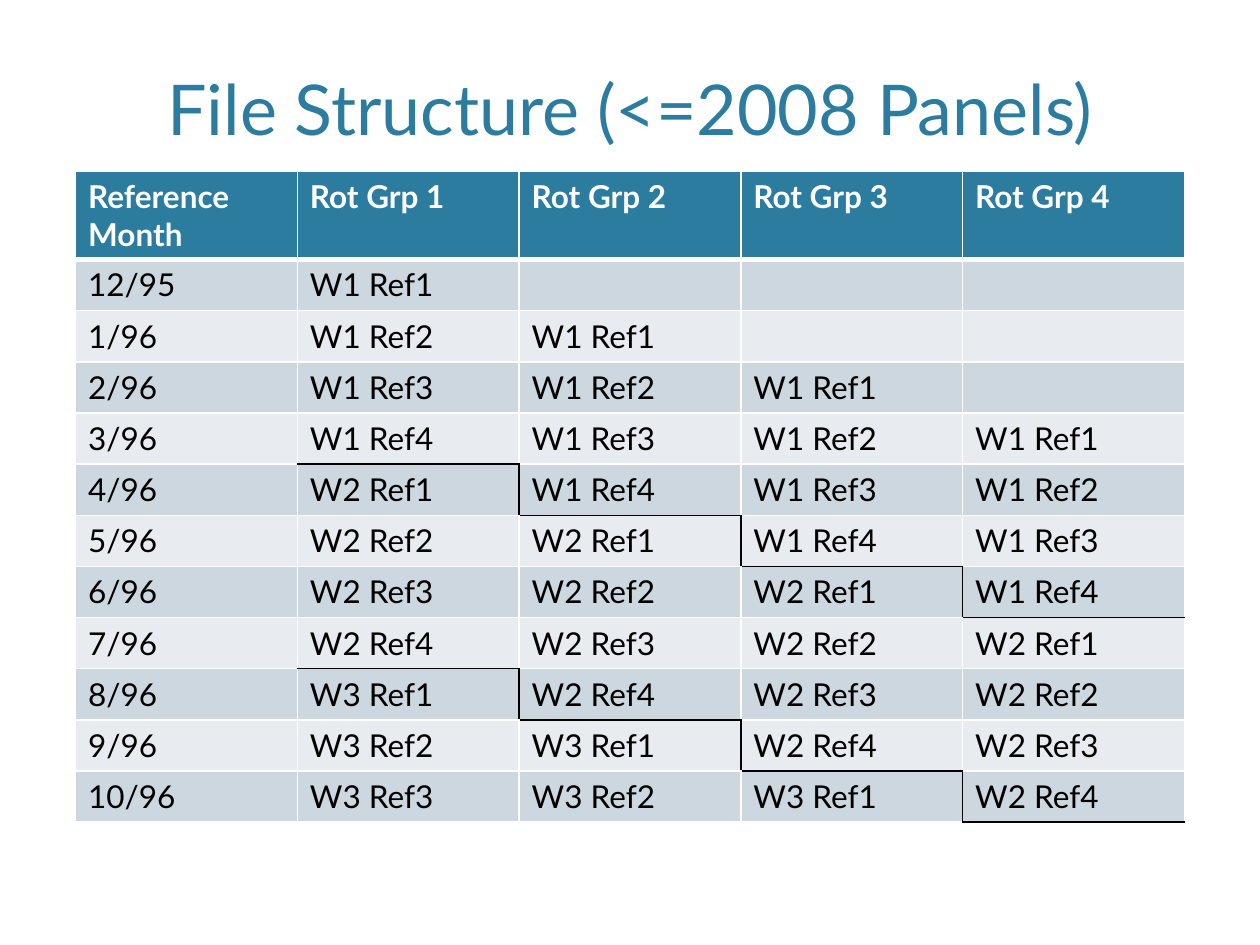
from lxml.etree import SubElement
from pptx import Presentation
from pptx.dml.color import RGBColor
from pptx.enum.text import MSO_ANCHOR, PP_ALIGN
from pptx.oxml.ns import qn
from pptx.util import Inches, Pt

COLORS = {
    "teal": "2C7C9F",
    "white": "FFFFFF",
    "black": "000000",
    "dark_band": "CDD7DF",
    "light_band": "E8ECF0",
}
FONT = "Lato"
MONTHS = ["12/95"] + [f"{month}/96" for month in range(1, 11)]
GROUPS = 4
REFS_PER_WAVE = 4
HEADER_SHARE = 0.134


def rgb(name):
    """Return the named colour of the palette."""
    return RGBColor.from_string(COLORS[name])


def write(frame, text, size=18, color="black", bold=False, align=PP_ALIGN.LEFT):
    """Put one formatted paragraph into a text frame."""
    paragraph = frame.paragraphs[0]
    paragraph.alignment = align
    run = paragraph.add_run()
    run.text = text
    run.font.name = FONT
    run.font.size = Pt(size)
    run.font.bold = bold
    run.font.color.rgb = rgb(color)


def set_borders(cell, **edges):
    """Draw all four cell edges, thin and white unless given as (colour, points)."""
    properties = cell._tc.get_or_add_tcPr()
    for edge in ("L", "R", "T", "B"):
        color, points = edges.get(edge, ("white", 1))
        line = SubElement(properties, qn(f"a:ln{edge}"), w=str(Pt(points)))
        fill = SubElement(line, qn("a:solidFill"))
        SubElement(fill, qn("a:srgbClr"), val=COLORS[color])


def fill_cell(cell, text, fill, edges, **style):
    """Give a cell its borders, fill and text."""
    set_borders(cell, **edges)
    cell.fill.solid()
    cell.fill.fore_color.rgb = rgb(fill)
    if text:
        write(cell.text_frame, text, **style)


def wave_cell(month, group):
    """Return the wave label and step-line edges for a month and rotation group."""
    age = month - group
    if age < 0:
        return "", {}
    wave, ref = divmod(age, REFS_PER_WAVE)
    step = ("black", 1)
    edges = {}
    if ref == REFS_PER_WAVE - 1:
        edges["B"] = step
        if group > 0:
            edges["L"] = step
    if ref == 0 and wave > 0:
        edges["T"] = step
        if group < GROUPS - 1:
            edges["R"] = step
    return f"W{wave + 1} Ref{ref + 1}", edges


def add_title(slide, left, top, width, height):
    """Place the centred heading at the foot of its box."""
    frame = slide.shapes.add_textbox(left, top, width, height).text_frame
    frame.word_wrap = True
    frame.vertical_anchor = MSO_ANCHOR.BOTTOM
    write(frame, "File Structure (<=2008 Panels)", size=40, color="teal",
          align=PP_ALIGN.CENTER)


def add_rotation_table(slide, left, top, width, height):
    """Place the table of reference months by rotation group."""
    table = slide.shapes.add_table(
        len(MONTHS) + 1, GROUPS + 1, left, top, width, height).table
    table.first_row = table.horz_banding = False
    for column in table.columns:
        column.width = width // (GROUPS + 1)
    header_height = int(height * HEADER_SHARE)
    for index, row in enumerate(table.rows):
        row.height = (height - header_height) // len(MONTHS) if index else header_height

    rule = ("white", 3)
    headings = ["Reference Month"] + [f"Rot Grp {g + 1}" for g in range(GROUPS)]
    for column, heading in enumerate(headings):
        fill_cell(table.cell(0, column), heading, "teal", {"B": rule},
                  color="white", bold=True)

    for month, label in enumerate(MONTHS):
        band = "light_band" if month % 2 else "dark_band"
        entries = [(label, {})] + [wave_cell(month, g) for g in range(GROUPS)]
        for column, (text, edges) in enumerate(entries):
            if month == 0:
                edges = {**edges, "T": rule}
            fill_cell(table.cell(month + 1, column), text, band, edges)


def main():
    """Build and save the slide."""
    deck = Presentation()
    deck.slide_width, deck.slide_height = Inches(10), Inches(7.5)
    slide = deck.slides.add_slide(deck.slide_layouts[6])

    def box(left, top, width, height):
        """Turn percentages of the slide into lengths."""
        return (int(deck.slide_width * left / 100), int(deck.slide_height * top / 100),
                int(deck.slide_width * width / 100), int(deck.slide_height * height / 100))

    add_title(slide, *box(6, 1.6, 88, 14.93))
    add_rotation_table(slide, *box(6, 18.13, 88, 68.8))
    deck.save("out.pptx")


if __name__ == "__main__":
    main()
